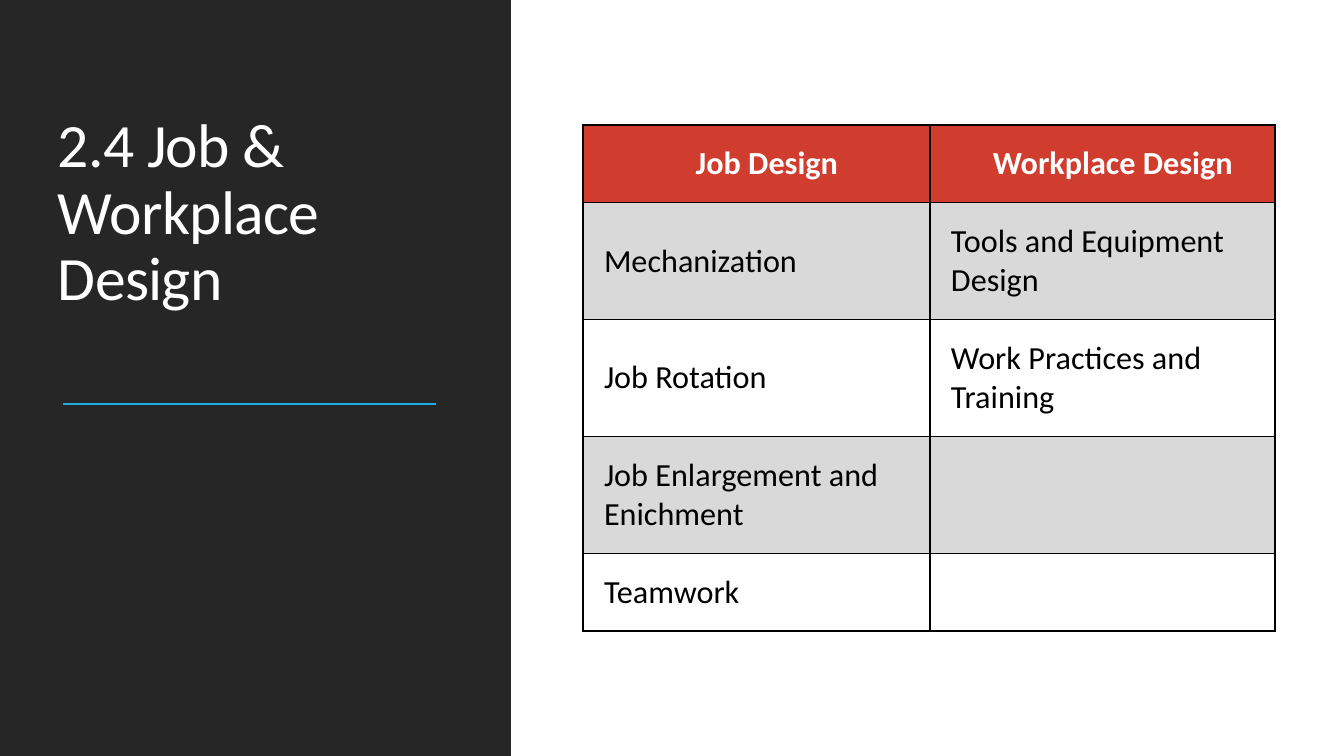
from dataclasses import dataclass
from lxml.etree import SubElement
from pptx import Presentation
from pptx.dml.color import RGBColor
from pptx.enum.shapes import MSO_CONNECTOR, MSO_SHAPE
from pptx.enum.text import MSO_ANCHOR, PP_ALIGN
from pptx.oxml.ns import qn
from pptx.util import Pt

WIDTH, HEIGHT = 1344, 756
SCALE = 12192000 / WIDTH


@dataclass(frozen=True)
class Theme:
    font: str = "Calibri"
    dark: str = "262626"
    white: str = "FFFFFF"
    black: str = "000000"
    accent: str = "1CADE4"
    head: str = "D03C2D"
    band: str = "D9D9D9"
    title: int = 44
    body: int = 23
    rule: float = 1.5
    border: int = 1


THEME = Theme()
ROWS = [
    ("Job Design", "Workplace Design"),
    ("Mechanization", "Tools and Equipment Design"),
    ("Job Rotation", "Work Practices and Training"),
    ("Job Enlargement and Enichment", ""),
    ("Teamwork", ""),
]


def px(*sizes):
    return [round(size * SCALE) for size in sizes]


def apply(target, formats):
    for name, value in formats.items():
        setattr(target, name, value)


def style(font, size, color, bold=False):
    apply(font, {"name": THEME.font, "size": Pt(size), "bold": bold})
    font.color.rgb = RGBColor.from_string(color)


def paint(fill, color):
    fill.solid()
    fill.fore_color.rgb = RGBColor.from_string(color)


def frame(cell):
    props = cell._tc.get_or_add_tcPr()
    for side in ("lnL", "lnR", "lnT", "lnB"):
        line = SubElement(props, qn(f"a:{side}"), w=str(Pt(THEME.border)))
        fill = SubElement(line, qn("a:solidFill"))
        SubElement(fill, qn("a:srgbClr"), val=THEME.black)


def add_panel(slide, left, top, width, height):
    # Dark panel
    panel = slide.shapes.add_shape(
        MSO_SHAPE.RECTANGLE, *px(left, top, width, height))
    panel.shadow.inherit = False
    paint(panel.fill, THEME.dark)
    panel.line.fill.background()

    # Title
    box = slide.shapes.add_textbox(*px(left + 49, top + 71, 403, 248))
    text = box.text_frame
    apply(text, {"word_wrap": True, "vertical_anchor": MSO_ANCHOR.BOTTOM})
    para = text.paragraphs[0]
    para.line_spacing = 0.9
    run = para.add_run()
    run.text = "2.4 Job & Workplace Design"
    style(run.font, THEME.title, THEME.white)
    run._r.get_or_add_rPr().set("spc", "-50")

    # Accent rule
    start, end, level = left + 64, left + 437, top + 404
    rule = slide.shapes.add_connector(
        MSO_CONNECTOR.STRAIGHT, *px(start, level, end, level))
    rule.line.color.rgb = RGBColor.from_string(THEME.accent)
    rule.line.width = Pt(THEME.rule)
    SubElement(rule._element.spPr, qn("a:effectLst"))


def add_grid(slide, left, top, width, height):
    grid = slide.shapes.add_table(
        len(ROWS), 2, *px(left, top, width, height)).table
    apply(grid, {"first_row": False, "horz_banding": False})

    # Column widths and row heights
    for col, size in zip(grid.columns, px(347, width - 347)):
        col.width = size
    tall = 117
    short = (height - 3 * tall) / 2
    for row, size in zip(grid.rows, px(short, tall, tall, tall, short)):
        row.height = size

    # Cells
    side, edge = px(21, 16)
    layout = {
        "margin_left": side, "margin_right": 0,
        "margin_top": edge, "margin_bottom": edge,
        "vertical_anchor": MSO_ANCHOR.MIDDLE,
    }
    for i, words in enumerate(ROWS):
        head = i == 0
        for j, word in enumerate(words):
            cell = grid.cell(i, j)
            apply(cell, layout)
            frame(cell)
            if head or i % 2:
                paint(cell.fill, THEME.head if head else THEME.band)
            else:
                cell.fill.background()
            para = cell.text_frame.paragraphs[0]
            para.alignment = PP_ALIGN.CENTER if head else PP_ALIGN.LEFT
            color = THEME.white if head else THEME.black
            if word:
                run = para.add_run()
                run.text = word
                style(run.font, THEME.body, color, head)
            else:
                style(para.font, THEME.body, color)


def main():
    deck = Presentation()
    deck.slide_width, deck.slide_height = px(WIDTH, HEIGHT)
    slide = deck.slides.add_slide(deck.slide_layouts[6])
    add_panel(slide, -1, 0, 512, HEIGHT)
    add_grid(slide, 583, 125, 692, 506)
    deck.save("out.pptx")


if __name__ == "__main__":
    main()
